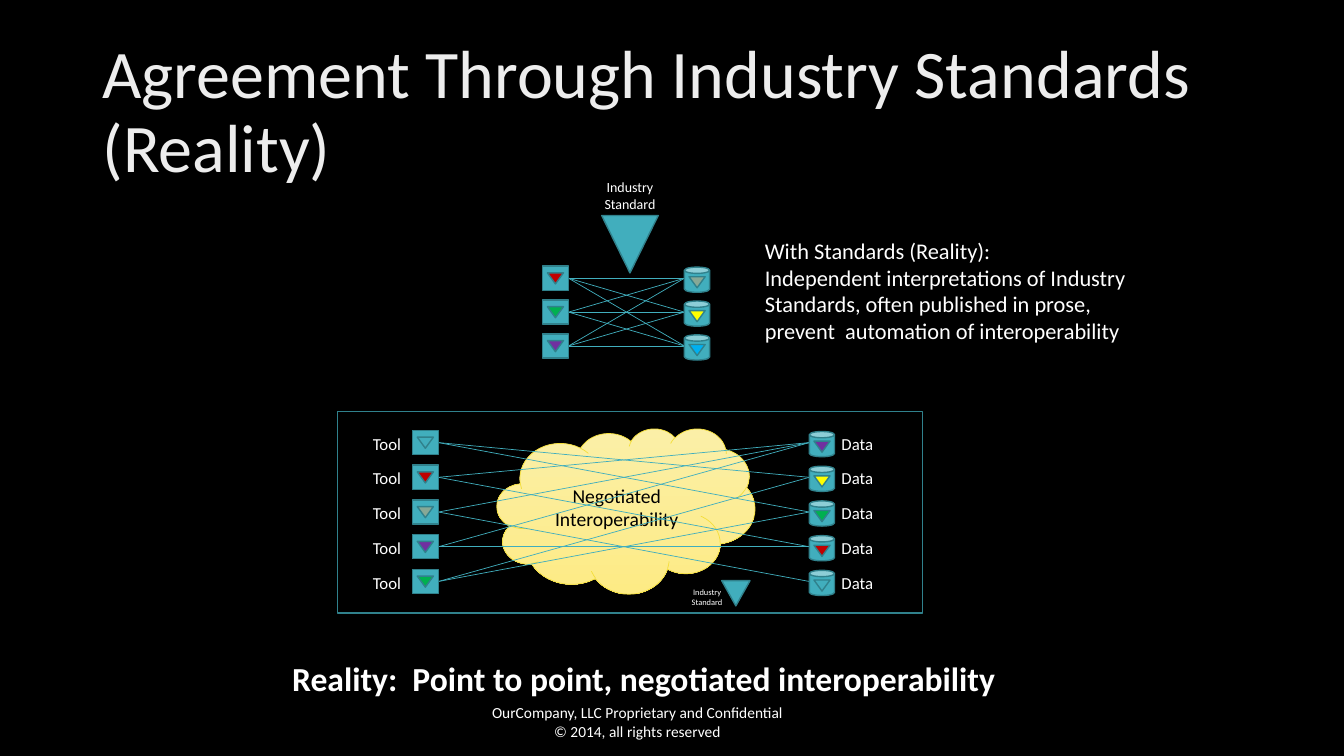
import itertools

import pptx
import pptx.dml.color
import pptx.enum.shapes
import pptx.enum.text
import pptx.oxml.ns
import pptx.util
from lxml import etree

Pt = pptx.util.Pt
RGBColor = pptx.dml.color.RGBColor
SHAPE = pptx.enum.shapes.MSO_SHAPE
ALIGN = pptx.enum.text.PP_ALIGN
ANCHOR = pptx.enum.text.MSO_ANCHOR

FONT = "Calibri"
BLACK = RGBColor(0x00, 0x00, 0x00)
WHITE = RGBColor(0xFF, 0xFF, 0xFF)
TITLE_GRAY = RGBColor(0xED, 0xED, 0xED)
TEAL = RGBColor(0x41, 0xAE, 0xBD)
DARK_TEAL = RGBColor(0x30, 0x81, 0x8C)
RED = RGBColor(0xC0, 0x00, 0x00)
GREEN = RGBColor(0x00, 0xB0, 0x50)
PURPLE = RGBColor(0x70, 0x30, 0xA0)
SAGE = RGBColor(0x87, 0xA8, 0x96)
YELLOW = RGBColor(0xFF, 0xFF, 0x00)
BLUE = RGBColor(0x00, 0xB0, 0xF0)
CLOUD_LIGHT = RGBColor(0xFB, 0xEF, 0xA7)
CLOUD_DEEP = RGBColor(0xFD, 0xEB, 0x85)
CLOUD_LINE = RGBColor(0xF4, 0xDE, 0x3A)

TOOL_WIDTH, TOOL_HEIGHT = 18.7, 17.3
DATA_SIZE = 18
BADGE_WIDTH, BADGE_HEIGHT = 11.5, 7.9


def format_paragraph(paragraph, size, color, align=ALIGN.LEFT, bold=False):
    paragraph.alignment = align
    paragraph.font.name = FONT
    paragraph.font.size = Pt(size)
    paragraph.font.color.rgb = color
    paragraph.font.bold = bold


def add_text(slide, box, lines, size, align=ALIGN.LEFT, bold=False, wrap=True):
    shape = slide.shapes.add_textbox(*map(Pt, box))
    shape.text_frame.word_wrap = wrap
    shape.text_frame.text = "\n".join(lines)
    for paragraph in shape.text_frame.paragraphs:
        format_paragraph(paragraph, size, WHITE, align, bold)


def add_figure(slide, kind, box, color=TEAL):
    shape = slide.shapes.add_shape(kind, *map(Pt, box))
    shape.shadow.inherit = False
    if color is None:
        shape.fill.background()
    else:
        shape.fill.solid()
        shape.fill.fore_color.rgb = color
    shape.line.color.rgb = DARK_TEAL
    shape.line.width = Pt(1)
    return shape


def add_down_triangle(slide, box, color=TEAL):
    triangle = add_figure(slide, SHAPE.ISOSCELES_TRIANGLE, box, color)
    triangle._element.spPr.xfrm.set("flipV", "1")


def add_link(slide, start, end):
    connector = slide.shapes.add_connector(
        pptx.enum.shapes.MSO_CONNECTOR.STRAIGHT, *map(Pt, start + end))
    connector.line.color.rgb = TEAL
    connector.line.width = Pt(0.5)
    etree.SubElement(connector._element.spPr, pptx.oxml.ns.qn("a:effectLst"))


def add_network(slide, box, pitch, tool_colors, data_colors, links):
    """Tools down the left edge, data stores down the right, links between."""
    left, top, width = box
    data_left = left + width - DATA_SIZE
    for tool, data in links:
        start = (left + TOOL_WIDTH, top + tool * pitch + TOOL_HEIGHT / 2)
        end = (data_left, top + data * pitch + TOOL_HEIGHT / 2)
        add_link(slide, start, end)
    for row, (tool_color, data_color) in enumerate(zip(tool_colors, data_colors)):
        y = top + row * pitch
        add_figure(slide, SHAPE.RECTANGLE, (left, y, TOOL_WIDTH, TOOL_HEIGHT))
        add_down_triangle(
            slide, (left + 3.6, y + 4.8, BADGE_WIDTH, BADGE_HEIGHT), tool_color)
        add_figure(slide, SHAPE.CAN, (data_left, y + 0.7, DATA_SIZE, DATA_SIZE))
        add_down_triangle(
            slide, (data_left + 3.3, y + 7.6, BADGE_WIDTH, BADGE_HEIGHT), data_color)


def add_title(slide, box):
    title = slide.shapes.title
    title.left, title.top, title.width, title.height = map(Pt, box)
    frame = title.text_frame
    frame.text = "Agreement Through Industry Standards (Reality)"
    frame.word_wrap = True
    frame.auto_size = pptx.enum.text.MSO_AUTO_SIZE.NONE
    frame.vertical_anchor = ANCHOR.MIDDLE
    frame.paragraphs[0].line_spacing = 0.9
    format_paragraph(frame.paragraphs[0], 48.6, TITLE_GRAY)


def add_standard_diagram(slide, box):
    left, top, width, height = box
    add_network(slide, (left, top + 66.3, width), 24.2,
                (RED, GREEN, PURPLE), (SAGE, YELLOW, BLUE),
                itertools.product(range(3), repeat=2))
    add_down_triangle(slide, (left + 42.4, top + 30.2, 40.4, 41))
    add_text(slide, (left + 26.6, top, 72, 31.7), ["Industry Standard"],
             10, ALIGN.CENTER)


def add_cloud(slide, box):
    cloud = add_figure(slide, SHAPE.CLOUD, box)
    cloud.fill.gradient()
    cloud.fill.gradient_angle = 270
    for stop, color in zip(cloud.fill.gradient_stops, (CLOUD_LIGHT, CLOUD_DEEP)):
        stop.color.rgb = color
    cloud.line.color.rgb = CLOUD_LINE
    cloud.line.width = Pt(0.5)
    frame = cloud.text_frame
    frame.text = "Negotiated Interoperability"
    frame.word_wrap = True
    frame.vertical_anchor = ANCHOR.MIDDLE
    format_paragraph(frame.paragraphs[0], 14, BLACK, ALIGN.CENTER)


def add_negotiation_panel(slide, box):
    left, top, width, height = box
    pitch = 24.8
    add_cloud(slide, (left + 113.8, top + 12.2, 184.3, 118.1))
    for row in range(5):
        y = top + 12.2 + row * pitch
        add_text(slide, (left + 18, y, 36, 22.3), ["Tool"], 12, wrap=False)
        add_text(slide, (left + 352.8, y, 38.9, 22.3), ["Data"], 12, wrap=False)
    add_figure(slide, SHAPE.RECTANGLE, box, None)
    add_network(slide, (left + 53.3, top + 13.7, 301.6), pitch,
                (TEAL, RED, SAGE, PURPLE, GREEN),
                (PURPLE, YELLOW, GREEN, RED, TEAL),
                [(0, 1), (0, 2), (1, 0), (1, 3), (2, 0),
                 (2, 4), (3, 0), (3, 3), (4, 1), (4, 2)])
    add_down_triangle(slide, (left + 274.3, top + 121, 20.2, 18))
    add_text(slide, (left + 235.4, top + 121.7, 56.9, 21.6),
             ["Industry Standard"], 6, ALIGN.CENTER)


def main():
    presentation = pptx.Presentation()
    presentation.slide_width, presentation.slide_height = Pt(960), Pt(540)
    slide = presentation.slides.add_slide(presentation.slide_layouts[5])
    slide.background.fill.solid()
    slide.background.fill.fore_color.rgb = BLACK

    add_title(slide, (66, 28.8, 828, 104.4))

    # Industry standard with its explanation
    add_standard_diagram(slide, (387.4, 123.8, 119.5, 132))
    add_text(slide, (539.3, 165.6, 276.5, 85), [
        "With Standards (Reality):",
        "Independent interpretations of Industry Standards, often published "
        "in prose,  prevent  automation of interoperability"], 16)

    # Negotiated links and the conclusion
    add_negotiation_panel(slide, (241.2, 293.8, 417.6, 144))
    add_text(slide, (201.6, 466.6, 550, 36),
             ["Reality:  Point to point, negotiated interoperability"],
             24, bold=True, wrap=False)

    # Copyright lines
    add_text(slide, (215.3, 499, 480.2, 33.8),
             ["OurCompany, LLC Proprietary and Confidential",
              "© 2014, all rights reserved"], 11, ALIGN.CENTER)
    presentation.save("out.pptx")


if __name__ == "__main__":
    main()
